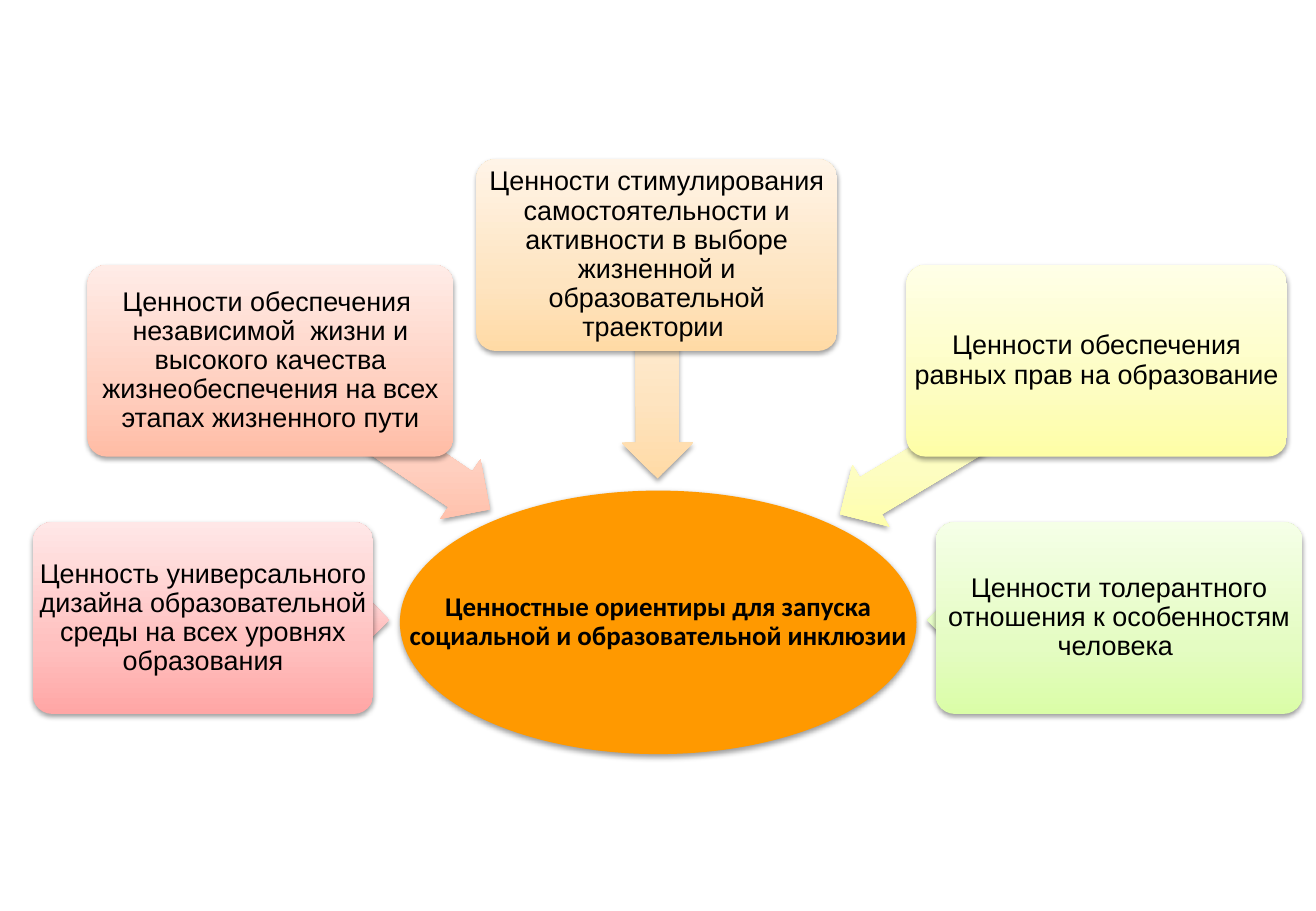
from copy import deepcopy
from math import cos, radians, sin

from lxml import etree
from pptx import Presentation
from pptx.dml.color import RGBColor
from pptx.enum.shapes import MSO_SHAPE
from pptx.enum.text import MSO_ANCHOR, PP_ALIGN
from pptx.oxml import parse_xml
from pptx.oxml.ns import nsdecls, qn
from pptx.util import Cm, Pt

OVAL = MSO_SHAPE.OVAL
ARROW = MSO_SHAPE.LEFT_ARROW
CARD = MSO_SHAPE.ROUNDED_RECTANGLE
MIDDLE = MSO_ANCHOR.MIDDLE
CENTER = PP_ALIGN.CENTER

SLIDE_SIZE = (27.51, 19.05)
CARD_HEIGHT = 4.01
ARROW_HEIGHT = 1.5
STOP_POSITIONS = (0, 0.35, 1)

CENTRE = {
    "text": "Ценностные ориентиры для запуска социальной и образовательной инклюзии",
    "frame": (8.36, 10.26, 10.8, 5.51),
    "color": "FF9900",
}
VALUES = [
    {"text": "Ценность универсального дизайна образовательной среды на всех уровнях образования",
     "left": 0.69, "top": 10.92, "width": 7.11, "arrow": (3.89, 0.6),
     "colors": ("FFA6A5", "FFC0BF", "FFE7E7")},
    {"text": "Ценности обеспечения  независимой  жизни и высокого качества "
             "жизнеобеспечения на всех этапах жизненного пути",
     "left": 1.83, "top": 5.54, "width": 7.65, "arrow": (5.54, 34.1),
     "colors": ("FFBCA5", "FFCFBF", "FFECE7")},
    {"text": "Ценности стимулирования самостоятельности и активности в выборе "
             "жизненной и образовательной траектории ",
     "left": 9.96, "top": 3.33, "width": 7.54, "arrow": (4.67, 89.8),
     "colors": ("FFDAA5", "FEE4C0", "FFF4E7")},
    {"text": "Ценности обеспечения равных прав на образование",
     "left": 18.95, "top": 5.54, "width": 7.95, "arrow": (6.25, 149.1),
     "colors": ("FEFEA6", "FDFDC1", "FFFFE7")},
    {"text": "Ценности толерантного отношения к особенностям человека ",
     "left": 19.56, "top": 10.92, "width": 7.67, "arrow": (4.01, 179.4),
     "colors": ("DAFDA7", "E4FCC2", "F5FFE7")},
]
CARD_FONT = {"name": "Arial", "size": Pt(16), "bold": False}
CENTRE_FONT = {"name": "Calibri", "size": Pt(16), "bold": True}
FRAME_FORMAT = {"word_wrap": True, "vertical_anchor": MIDDLE, "margin_left": 0,
                "margin_right": 0, "margin_top": 0, "margin_bottom": 0}
PARAGRAPH_FORMAT = {"alignment": CENTER, "line_spacing": 0.9}
SHADOW = (f'<a:outerShdw {nsdecls("a")} blurRad="40000" dist="20000" dir="5400000" '
          'rotWithShape="0"><a:srgbClr val="000000"><a:alpha val="38000"/>'
          '</a:srgbClr></a:outerShdw>')


def set_color(color_format, value):
    color_format.rgb = RGBColor.from_string(value)


def set_format(target, values):
    for name, value in values.items():
        setattr(target, name, value)


def add_shape(slide, kind, frame, adjustments=()):
    shape = slide.shapes.add_shape(kind, *map(Cm, frame))
    for index, value in enumerate(adjustments):
        shape.adjustments[index] = value
    shape.line.fill.background()
    shape.shadow.inherit = False
    shape._element.spPr.find(qn("a:effectLst")).append(parse_xml(SHADOW))
    return shape


def fill_gradient(shape, colors):
    shape.fill.gradient()
    shape.fill.gradient_angle = 90
    gradient = shape._element.spPr.find(qn("a:gradFill"))
    gradient.set("rotWithShape", "0")
    stop_list = gradient.find(qn("a:gsLst"))
    stop_list.append(deepcopy(stop_list[0]))
    for stop, position, color in zip(shape.fill.gradient_stops, STOP_POSITIONS, colors):
        stop.position = position
        set_color(stop.color, color)


def write_text(shape, text, font):
    set_format(shape.text_frame, FRAME_FORMAT)
    paragraph = shape.text_frame.paragraphs[0]
    set_format(paragraph, PARAGRAPH_FORMAT)
    run = paragraph.add_run()
    run.text = text
    set_format(run.font, font)
    set_color(run.font.color, "000000")


def add_centre(slide):
    ellipse = add_shape(slide, OVAL, CENTRE["frame"])
    ellipse.fill.solid()
    set_color(ellipse.fill.fore_color, CENTRE["color"])
    caption = slide.shapes.add_textbox(*map(Cm, CENTRE["frame"]))
    write_text(caption, CENTRE["text"], CENTRE_FONT)


def add_value(slide, value):
    left, top, width = value["left"], value["top"], value["width"]
    length, angle = value["arrow"]
    middle_x = left + width / 2 + length / 2 * cos(radians(angle))
    middle_y = top + CARD_HEIGHT / 2 + length / 2 * sin(radians(angle))
    arrow_frame = (middle_x - length / 2, middle_y - ARROW_HEIGHT / 2, length, ARROW_HEIGHT)
    arrow = add_shape(slide, ARROW, arrow_frame, (0.6, 0.5))
    arrow.rotation = angle + 180
    card = add_shape(slide, CARD, (left, top, width, CARD_HEIGHT), (0.1,))
    for shape in (arrow, card):
        fill_gradient(shape, value["colors"])
    write_text(card, value["text"], CARD_FONT)


def main():
    presentation = Presentation()
    presentation.slide_width, presentation.slide_height = map(Cm, SLIDE_SIZE)
    slide = presentation.slides.add_slide(presentation.slide_layouts[6])
    add_centre(slide)
    for value in VALUES:
        add_value(slide, value)
    presentation.save("out.pptx")


if __name__ == "__main__":
    main()
